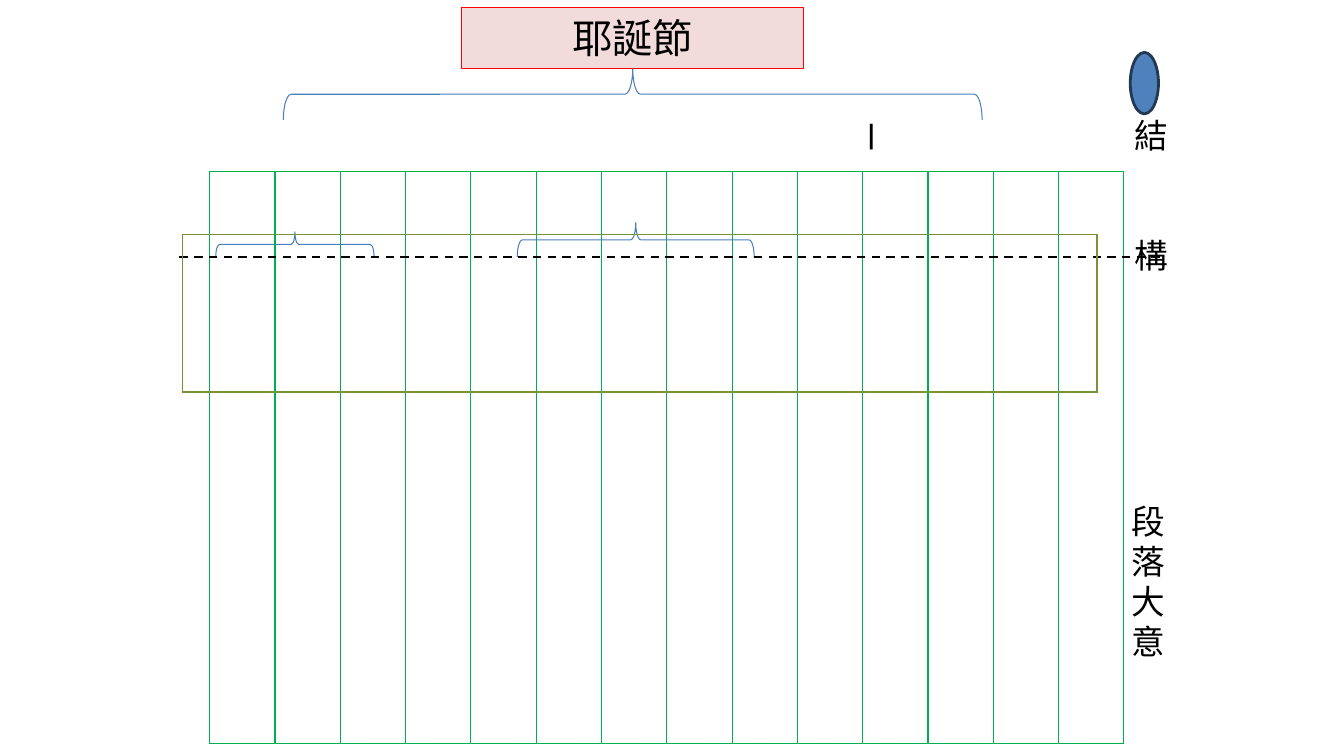
from lxml import etree
from pptx import Presentation
from pptx import util as u
from pptx.dml.color import RGBColor
from pptx.enum import dml, shapes, text
from pptx.oxml.ns import qn

BLACK = RGBColor(0x00, 0x00, 0x00)
RED = RGBColor(0xFF, 0x00, 0x00)
PINK = RGBColor(0xF2, 0xDC, 0xDB)
BLUE = RGBColor(0x4F, 0x81, 0xBD)
NAVY = RGBColor(0x23, 0x39, 0x53)
BRACE_BLUE = RGBColor(0x4B, 0x7E, 0xBC)
GREEN = RGBColor(0x00, 0xB0, 0x50)
OLIVE = RGBColor(0x77, 0x93, 0x3C)

GRID_LEFT, GRID_TOP, GRID_WIDTH = 2.08, 1.7, 9.07
DASH_Y = 2.55
LINE_PITCH = 28.6


def format_text(paragraph, size, font):
    paragraph.font.size = u.Pt(size)
    paragraph.font.name = font
    paragraph.font.color.rgb = BLACK
    for run in paragraph.runs:
        east_asian = etree.SubElement(run._r.get_or_add_rPr(), qn("a:ea"))
        east_asian.set("typeface", font)


def add_ruled_table(columns, left, top, width, height, color):
    table = slide.shapes.add_table(
        1, columns, u.Inches(left), u.Inches(top), u.Inches(width), u.Inches(height)).table
    table.first_row = table.horz_banding = False
    for cell in table.iter_cells():
        properties = cell._tc.get_or_add_tcPr()
        for side in ("lnL", "lnR", "lnT", "lnB"):
            border = etree.SubElement(properties, qn(f"a:{side}"), w=str(u.Pt(1)))
            fill = etree.SubElement(border, qn("a:solidFill"))
            etree.SubElement(fill, qn("a:srgbClr"), val=str(color))
        cell.fill.background()


presentation = Presentation()
presentation.slide_width = u.Inches(13.33)
presentation.slide_height = u.Inches(7.5)
slide = presentation.slides.add_slide(presentation.slide_layouts[5])

# Title box
title = slide.shapes.title
title.left, title.top = u.Inches(4.58), u.Inches(0.07)
title.width, title.height = u.Inches(3.39), u.Inches(0.61)
title.fill.solid()
title.fill.fore_color.rgb = PINK
title.line.color.rgb = RED
title.line.width = u.Pt(0.75)
title.text_frame.text = "耶誕節"
title.text_frame.vertical_anchor = text.MSO_ANCHOR.MIDDLE
title.text_frame.paragraphs[0].alignment = text.PP_ALIGN.CENTER
format_text(title.text_frame.paragraphs[0], 28.8, "Calibri")

# Braces opening downwards: left, bottom, span, depth
for left, bottom, span, depth in (
    (2.81, 1.19, 6.93, 0.51),
    (5.13, DASH_Y, 2.35, 0.34),
    (2.14, DASH_Y, 1.57, 0.25),
):
    brace = slide.shapes.add_shape(
        shapes.MSO_SHAPE.LEFT_BRACE,
        u.Inches(left + (span - depth) / 2), u.Inches(bottom - (span + depth) / 2),
        u.Inches(depth), u.Inches(span))
    brace.rotation = 90
    brace.adjustments[0] = 0.151
    brace.shadow.inherit = False
    brace.fill.background()
    brace.line.color.rgb = BRACE_BLUE
    brace.line.width = u.Pt(0.75)

# Fourteen-column grid
add_ruled_table(14, GRID_LEFT, GRID_TOP, GRID_WIDTH, 5.68, GREEN)

# Dashed divider
divider = slide.shapes.add_connector(
    shapes.MSO_CONNECTOR.STRAIGHT,
    u.Inches(1.78), u.Inches(DASH_Y), u.Inches(11.56), u.Inches(DASH_Y))
divider.line.color.rgb = BLACK
divider.line.width = u.Pt(1.5)
divider.line.dash_style = dml.MSO_LINE.DASH
etree.SubElement(divider._element.spPr, qn("a:effectLst"))

# Vertical dash and side labels: lines, box, size, font
for lines, box, size, font in (
    (["─"], (8.24, 1.14, 0.81, 2.67), 36, "Calibri"),
    (["結", "構"], (11.15, 1.09, 0.55, 1.72), 24, "Noto Sans CJK SC"),
    (["段落大意"], (11.12, 4.92, 0.55, 1.72), 24, "Noto Sans CJK SC"),
):
    label = slide.shapes.add_textbox(*(u.Inches(length) for length in box))
    frame = label.text_frame
    frame.word_wrap = True
    frame.text = "\n".join(lines)
    for index, paragraph in enumerate(frame.paragraphs):
        format_text(paragraph, size, font)
        if size == 24:
            paragraph.line_spacing = u.Pt(LINE_PITCH)
            paragraph.space_before = u.Pt(2 * LINE_PITCH * index)
        else:
            frame._txBody.bodyPr.set("vert", "eaVert")

# Highlighted band across the grid
add_ruled_table(1, 1.81, 2.33, GRID_WIDTH, 1.56, OLIVE)

# Marker above the structure label
marker = slide.shapes.add_shape(
    shapes.MSO_SHAPE.OVAL, u.Inches(11.21), u.Inches(0.52), u.Inches(0.28), u.Inches(0.61))
marker.shadow.inherit = False
marker.fill.solid()
marker.fill.fore_color.rgb = BLUE
marker.line.color.rgb = NAVY
marker.line.width = u.Pt(2)

presentation.save("out.pptx")
